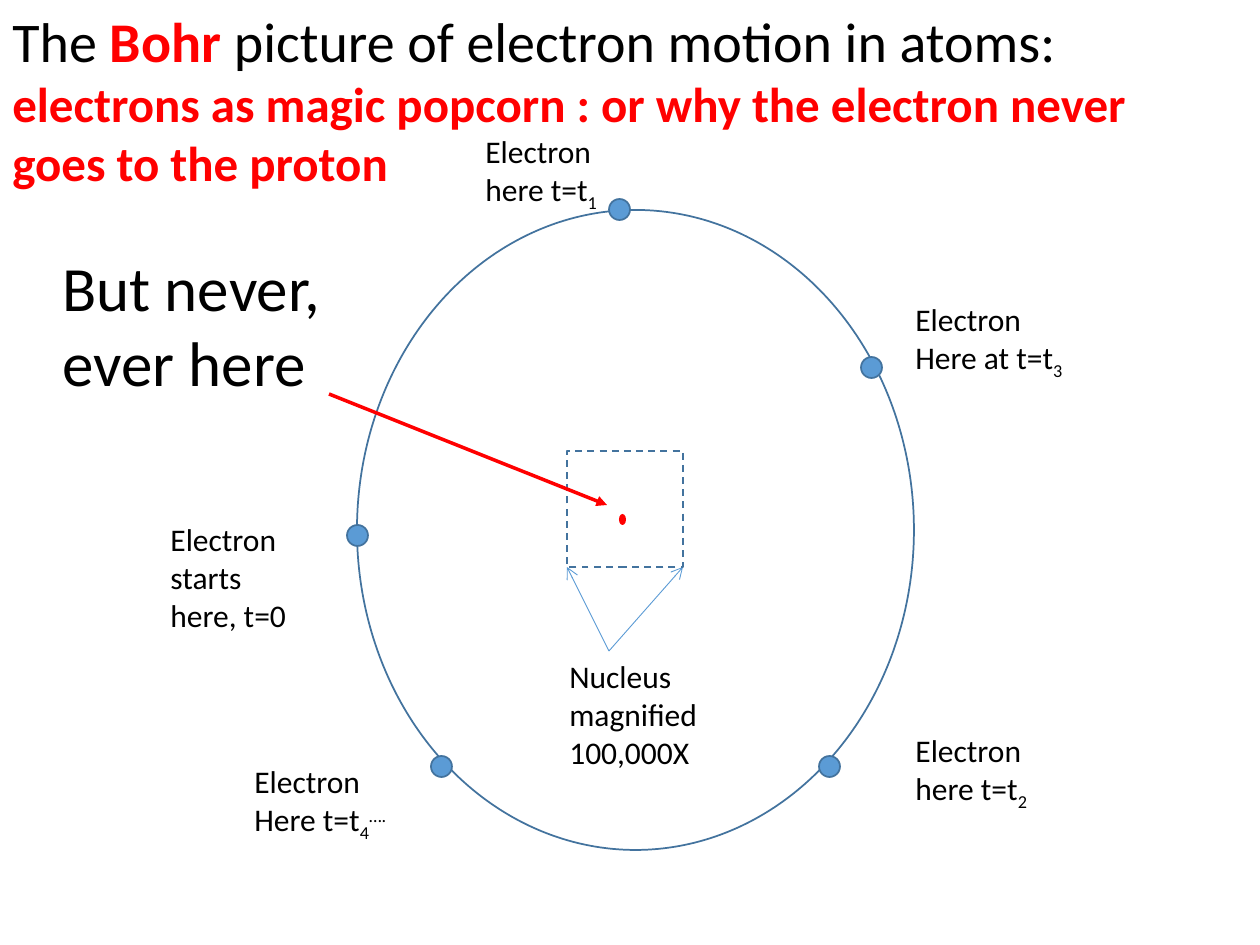
from lxml import etree
from pptx import Presentation
from pptx.dml.color import RGBColor
from pptx.enum.dml import MSO_LINE
from pptx.enum.shapes import MSO_CONNECTOR, MSO_SHAPE
from pptx.enum.text import MSO_AUTO_SIZE
from pptx.oxml.ns import qn
from pptx.util import Emu, Pt

OVAL, RECTANGLE = MSO_SHAPE.OVAL, MSO_SHAPE.RECTANGLE
STRAIGHT, DASH = MSO_CONNECTOR.STRAIGHT, MSO_LINE.DASH
GROW = MSO_AUTO_SIZE.SHAPE_TO_FIT_TEXT

BLACK = RGBColor(0x00, 0x00, 0x00)
RED = RGBColor(0xFF, 0x00, 0x00)
BLUE = RGBColor(0x5B, 0x9B, 0xD5)
DARK_BLUE = RGBColor(0x43, 0x73, 0x9E)

FONT = "Calibri"
PX_PER_INCH = 126
ELECTRON_SIZE = 21
SUBSCRIPT, SUPERSCRIPT = -25, 30

ELECTRONS = [(347, 525), (609, 199), (819, 756), (431, 756), (861, 357)]

LABELS = [
    ((158, 514, 158, 127), [[("Electron starts here, t=0", 0)]]),
    ((557, 651, 199, 127), [[("Nucleus magnified 100,000X", 0)]]),
    ((473, 126, 179, 89), [[("Electron here t=t", 0), ("1", SUBSCRIPT)]]),
    ((903, 725, 273, 89), [[("Electron", 0)], [("here t=t", 0), ("2", SUBSCRIPT)]]),
    ((242, 756, 189, 89),
     [[("Electron", 0)], [("Here t=t", 0), ("4", SUBSCRIPT), ("….", SUPERSCRIPT)]]),
    ((903, 294, 242, 89), [[("Electron", 0)], [("Here at t=t", 0), ("3", SUBSCRIPT)]]),
]


def px(*lengths):
    return [Emu(round(length * 914400 / PX_PER_INCH)) for length in lengths]


def add_outline(page, kind, bounds, fill=None, line=None, dash=None):
    shape = page.shapes.add_shape(kind, *px(*bounds))
    shape.shadow.inherit = False
    if fill is None:
        shape.fill.background()
    else:
        shape.fill.solid()
        shape.fill.fore_color.rgb = fill
    if line is None:
        shape.line.fill.background()
    else:
        shape.line.color.rgb = line
        shape.line.width = Pt(1)
        shape.line.dash_style = dash


def add_arrow(page, start, end, color, width, tip):
    arrow = page.shapes.add_connector(STRAIGHT, *px(*start, *end))
    arrow.line.color.rgb = color
    arrow.line.width = Pt(width)
    etree.SubElement(arrow.line._get_or_add_ln(), qn("a:tailEnd")).set("type", tip)
    etree.SubElement(arrow._element.spPr, qn("a:effectLst"))


def add_text_box(page, bounds):
    box = page.shapes.add_textbox(*px(*bounds))
    box.text_frame.word_wrap = True
    box.text_frame.auto_size = GROW
    return box.text_frame


def style_para(para, size, color=BLACK, bold=False):
    para.font.name = FONT
    para.font.size = Pt(size)
    para.font.color.rgb = color
    para.font.bold = bold


def add_label(page, bounds, lines, size=18):
    frame = add_text_box(page, bounds)
    for index, spans in enumerate(lines):
        para = frame.add_paragraph() if index else frame.paragraphs[0]
        style_para(para, size)
        for text, baseline in spans:
            span = para.add_run()
            span.text = text
            if baseline:
                span._r.get_or_add_rPr().set("baseline", str(baseline * 1000))


def add_title(page):
    frame = add_text_box(page, (0, 0, 1207, 199))
    heading = frame.paragraphs[0]
    style_para(heading, 32)
    for text in ("The ", "Bohr ", "picture of electron motion in atoms:"):
        heading.add_run().text = text
    name = heading.runs[1].font
    name.bold = True
    name.color.rgb = RED
    subtitle = frame.add_paragraph()
    subtitle.text = "electrons as magic popcorn : or why the electron never goes to the proton"
    style_para(subtitle, 28, RED, True)


def main():
    deck = Presentation()
    deck.slide_width, deck.slide_height = px(1260, 945)
    page = deck.slides.add_slide(deck.slide_layouts[6])

    add_outline(page, OVAL, (357, 210, 557, 640), line=DARK_BLUE)
    add_outline(page, OVAL, (619, 514, 7, 11), fill=RED)
    for corner in ((567, 567), (683, 567)):
        add_arrow(page, (609, 651), corner, BLUE, 0.5, "arrow")
    add_outline(page, RECTANGLE, (567, 451, 116, 116), line=DARK_BLUE, dash=DASH)
    for left, top in ELECTRONS:
        add_outline(page, OVAL, (left, top, ELECTRON_SIZE, ELECTRON_SIZE), BLUE, DARK_BLUE)
    for bounds, lines in LABELS:
        add_label(page, bounds, lines)
    add_title(page)
    add_label(page, (50, 242, 315, 165), [[("But never, ever here", 0)]], 36)
    add_arrow(page, (329, 394), (607, 505), RED, 2, "triangle")

    deck.save("out.pptx")


if __name__ == "__main__":
    main()
